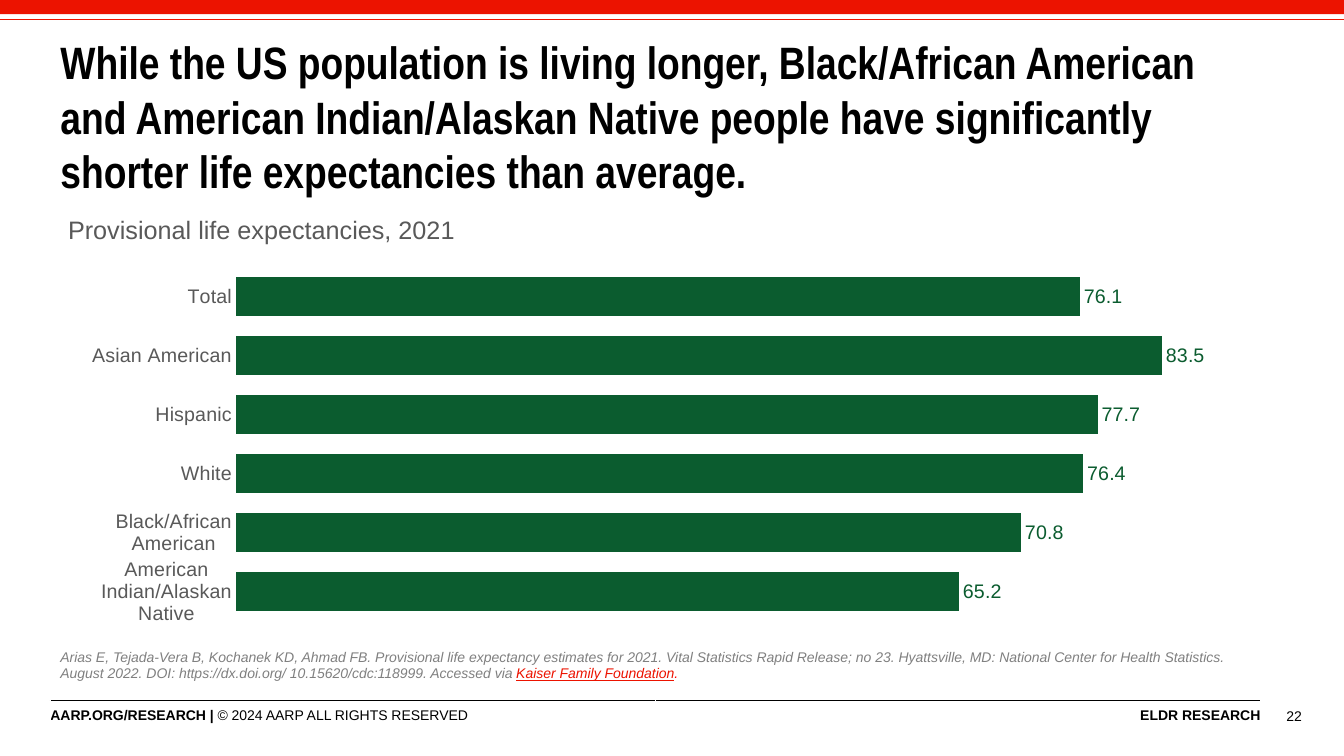
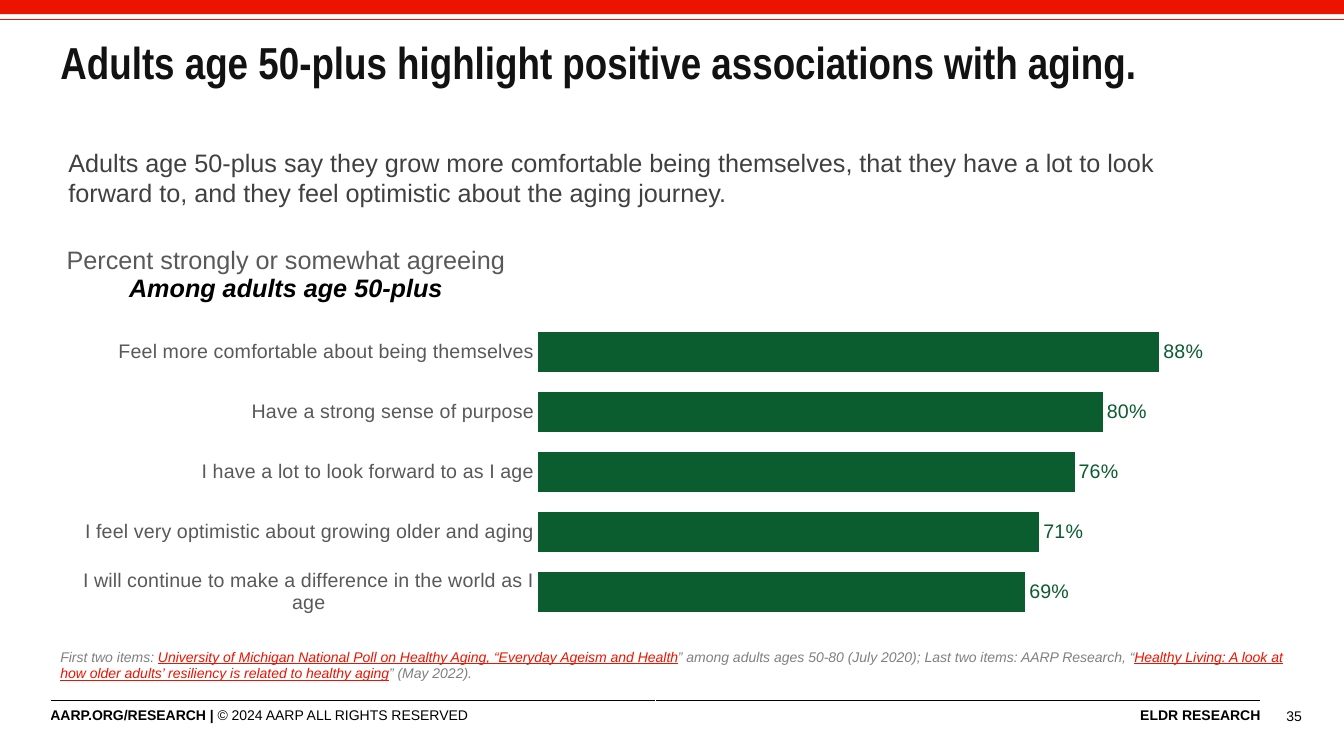
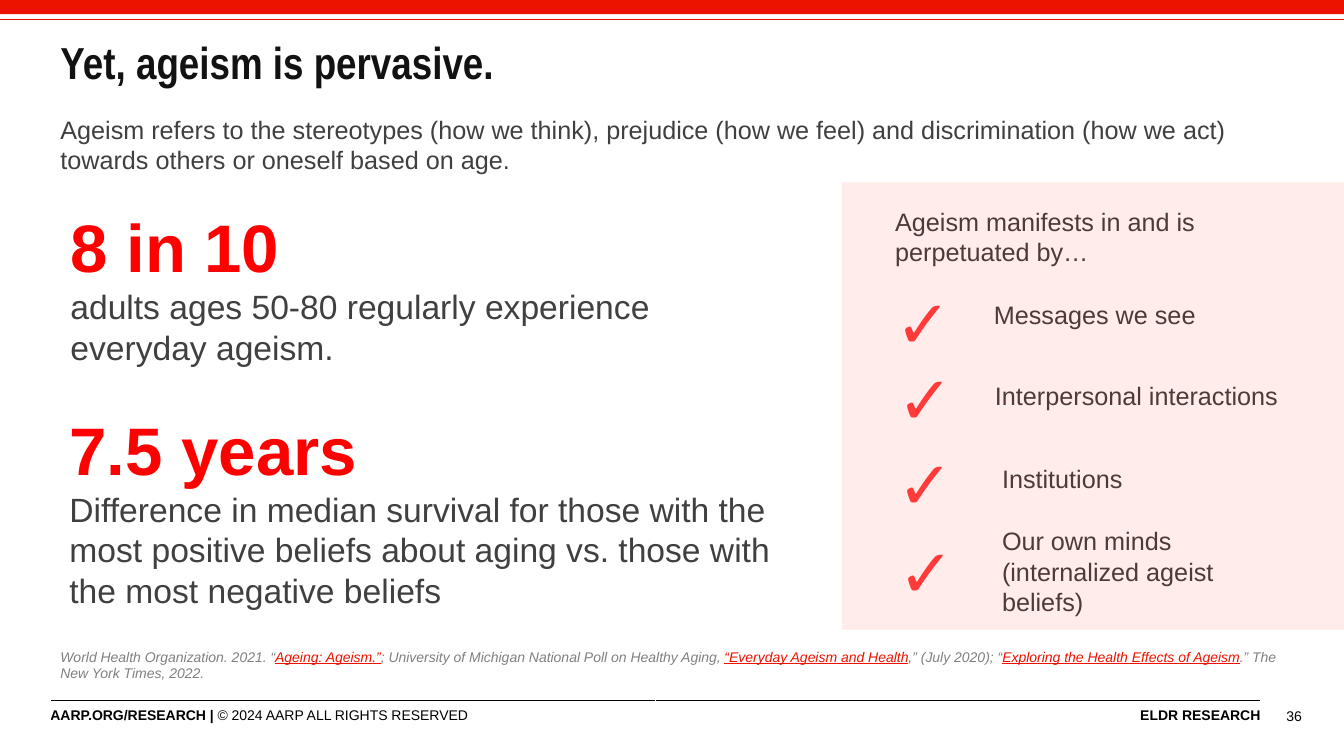
from lxml.etree import SubElement
from pptx import Presentation
from pptx.chart.data import CategoryChartData
from pptx.dml.color import RGBColor
from pptx.enum.chart import XL_CHART_TYPE as ChartType, XL_LABEL_POSITION as LabelPosition
from pptx.enum.chart import XL_TICK_MARK as TickMark
from pptx.enum.shapes import MSO_CONNECTOR as Connector, MSO_SHAPE as Preset
from pptx.enum.text import MSO_ANCHOR as Anchor, MSO_AUTO_SIZE as AutoSize, PP_ALIGN as Align
from pptx.oxml.ns import qn
from pptx.util import Inches, Pt

WIDTH, HEIGHT = 13.33, 7.5
MARGIN = 0.5
CONTENT_WIDTH = 11.98
WIDE_WIDTH = 12.51
RED, BRIGHT_RED, PINK, GREEN = "EC1300", "FF0000", "FFC2BE", "0B5C2F"
BLACK, INK, DARK, MIDDLE, GREY = "000000", "121212", "404040", "595959", "808080"
LINK = {"color": RED, "underline": True}


def rgb(value):
    return RGBColor.from_string(value)


def inches(*values):
    return [Inches(value) for value in values]


def style(font, size=None, color=None, name=None, **flags):
    if size:
        font.size = Pt(size)
    if color:
        font.color.rgb = rgb(color)
    if name:
        font.name = name
    for flag, value in flags.items():
        setattr(font, flag, value)


def write(frame, paragraphs, align=Align.LEFT, **base):
    base = {"name": "Arial", "color": BLACK, **base}
    for index, runs in enumerate(paragraphs):
        paragraph = frame.add_paragraph() if index else frame.paragraphs[0]
        paragraph.alignment = align
        style(paragraph.font, **base)
        for text, changes in runs:
            run = paragraph.add_run()
            run.text = text
            style(run.font, **changes)


def add_text(slide, box, paragraphs, anchor=Anchor.TOP, wrap=True, **base):
    frame = slide.shapes.add_textbox(*inches(*box)).text_frame
    frame.word_wrap = wrap
    frame.vertical_anchor = anchor
    write(frame, paragraphs, **base)


def plain(text):
    return [[(text, {})]]


def add_band(slide):
    left, right, depth = -0.03, 13.36, 0.14
    outline = [inches(*point) for point in
               ((left, depth), (left, 0), (right - 0.02, 0), (right, depth))]
    builder = slide.shapes.build_freeform(*outline[0], scale=1.0)
    builder.add_line_segments(outline[1:], close=True)
    band = builder.convert_to_shape()
    band.shadow.inherit = False
    band.fill.solid()
    band.fill.fore_color.rgb = rgb(RED)
    band.line.fill.background()
    rule = slide.shapes.add_connector(Connector.STRAIGHT, *inches(-0.06, 0.19, WIDTH, 0.19))
    rule.line.color.rgb = rgb(RED)
    rule.line.width = Pt(0.5)
    SubElement(rule.element.spPr, qn("a:effectLst"))
    return [band, rule]


def add_footer(slide):
    holder = slide.shapes.add_table(1, 2, *inches(MARGIN, 6.95, 12, 0.3))
    table = holder.table
    table.first_row = table.horz_banding = False
    table.rows[0].height = Inches(0.3)
    sides = (
        ([("AARP.ORG/RESEARCH | ", {"bold": True}),
          ("© 2024 AARP ALL RIGHTS RESERVED", {})], Align.LEFT),
        ([("ELDR RESEARCH", {"bold": True})], Align.RIGHT),
    )
    for cell, (runs, align) in zip(table.rows[0].cells, sides):
        cell.margin_left = cell.margin_right = cell.margin_top = cell.margin_bottom = 0
        cell.vertical_anchor = Anchor.MIDDLE
        cell.fill.background()
        write(cell.text_frame, [runs], align=align, size=10)
        properties = cell.text_frame._txBody.getparent().get_or_add_tcPr()
        border = SubElement(properties, qn("a:lnT"), w=str(Pt(1)))
        SubElement(SubElement(border, qn("a:solidFill")), qn("a:srgbClr"), val=BLACK)
        properties.insert(0, border)
    return [holder]


def share_on_layout(slide):
    for shape in add_footer(slide) + add_band(slide):
        slide.slide_layout.shapes.element.append(shape.element)


def start_slide(presentation, title, number, source, box=(MARGIN, 0.16, WIDE_WIDTH, 0.9),
                size=32, color=INK):
    slide = presentation.slides.add_slide(presentation.slide_layouts[5])
    if len(presentation.slides) == 1:
        share_on_layout(slide)
    heading = slide.shapes.title
    heading.left, heading.top, heading.width, heading.height = inches(*box)
    frame = heading.text_frame
    frame.auto_size = AutoSize.NONE
    frame.vertical_anchor = Anchor.MIDDLE
    write(frame, plain(title), size=size, color=color, name="Arial Narrow", bold=True)
    add_text(slide, (12.58, 6.93, 0.43, 0.34), plain(str(number)), Anchor.MIDDLE,
             align=Align.RIGHT, size=10)
    add_text(slide, (MARGIN, 6.38, box[2], 0.34), [source], size=10, color=GREY, italic=True)
    return slide


def set_layout(parent, position, **shares):
    for old in parent.findall(qn("c:layout")):
        parent.remove(old)
    layout = SubElement(parent, qn("c:layout"))
    parent.insert(position, layout)
    manual = SubElement(layout, qn("c:manualLayout"))
    if "w" in shares:
        SubElement(manual, qn("c:layoutTarget"), val="inner")
    for mode in ("xMode", "yMode"):
        SubElement(manual, qn(f"c:{mode}"), val="edge")
    for key, share in shares.items():
        SubElement(manual, qn(f"c:{key}"), val=f"{share:.4f}")


def add_bars(slide, box, plot_box, title, bars, maximum, number_format):
    left, top, width, height = box
    data = CategoryChartData(number_format=number_format)
    data.categories = [name for name, _ in bars]
    data.add_series("Series 1", [value for _, value in bars])
    chart = slide.shapes.add_chart(ChartType.BAR_CLUSTERED, *inches(*box), data).chart
    style(chart.font, size=12, color=BLACK, name="Arial")
    chart.has_legend = False
    chart.has_title = True
    write(chart.chart_title.text_frame, title, align=Align.CENTER, size=18, color=MIDDLE,
          bold=False)

    categories = chart.category_axis
    categories.reverse_order = True
    categories.major_tick_mark = categories.minor_tick_mark = TickMark.NONE
    categories.format.line.fill.background()
    style(categories.tick_labels.font, size=14, color=MIDDLE, name="Arial")
    values = chart.value_axis
    values.visible = values.has_major_gridlines = False
    values.minimum_scale, values.maximum_scale = 0, maximum

    plot = chart.plots[0]
    plot.gap_width = 50
    plot.vary_by_categories = False
    fill = plot.series[0].format.fill
    fill.solid()
    fill.fore_color.rgb = rgb(GREEN)
    plot.has_data_labels = True
    labels = plot.data_labels
    labels.show_value = True
    labels.position = LabelPosition.OUTSIDE_END
    labels.number_format, labels.number_format_is_linked = number_format, False
    style(labels.font, size=14, color=GREEN, name="Arial")

    set_layout(chart.element.find(".//" + qn("c:title")), 1, x=0.05 / width, y=0.07 / height)
    plot_left, plot_top, plot_width, plot_height = plot_box
    set_layout(chart.element.find(".//" + qn("c:plotArea")), 0,
               x=plot_left / width, y=plot_top / height,
               w=plot_width / width, h=plot_height / height)


def add_statistic(slide, box, figure, text):
    add_text(slide, box, [[(figure, {"size": 48, "color": BRIGHT_RED, "bold": True})],
                          [(text, {})]], size=24, color=DARK)


def add_checklist(slide, box, heading, items):
    left, top, width, height = box
    add_text(slide, (left + 0.43, top + 0.18, 3.37, 0.71), plain(heading), Anchor.MIDDLE, size=18)
    for text, indent, label_top, label_width, label_height, check_indent, check_top in items:
        add_text(slide, (left + indent, top + label_top, label_width, label_height),
                 plain(text), Anchor.MIDDLE, size=18)
        add_text(slide, (left + check_indent, top + check_top, 0.73, 0.91), plain("✓"),
                 wrap=False, size=48, color=BRIGHT_RED)
    panel = slide.shapes.add_shape(Preset.RECTANGLE, *inches(*box))
    panel.shadow.inherit = False
    panel.line.fill.background()
    panel.fill.solid()
    panel.fill.fore_color.rgb = rgb(PINK)
    SubElement(panel.element.spPr.find(".//" + qn("a:srgbClr")), qn("a:alpha"), val="30000")


def build_life_expectancy(presentation):
    slide = start_slide(
        presentation,
        "While the US population is living longer, Black/African American and American "
        "Indian/Alaskan Native people have significantly shorter life expectancies than average.",
        22,
        [("Arias E, Tejada-Vera B, Kochanek KD, Ahmad FB. Provisional life expectancy estimates "
          "for 2021. Vital Statistics Rapid Release; no 23. Hyattsville, MD: National Center for "
          "Health Statistics. August 2022. DOI: https://dx.doi.org/ 10.15620/cdc:118999. "
          "Accessed via ", {}),
         ("Kaiser Family Foundation", LINK), (".", {"color": BRIGHT_RED})],
        box=(MARGIN, 0.7, CONTENT_WIDTH, 0.9), size=32.4, color=BLACK)
    bars = [("Total", 76.1), ("Asian American", 83.5), ("Hispanic", 77.7), ("White", 76.4),
            ("Black/African American", 70.8), ("American Indian/Alaskan Native", 65.2)]
    add_bars(slide, (0.58, 2, 11.9, 4.25), (1.76, 0.65, 9.9, 3.51),
             plain("Provisional life expectancies, 2021"), bars, 90, "0.0")


def build_positive_associations(presentation):
    slide = start_slide(
        presentation, "Adults age 50-plus highlight positive associations with aging.", 35,
        [("First two items: ", {}),
         ("University of Michigan National Poll on Healthy Aging, “Everyday Ageism and Health",
          LINK),
         ("” among adults ages 50-80 (July 2020); Last two items: AARP Research, “", {}),
         ("Healthy Living: A look at how older adults’ resiliency is related to healthy aging",
          LINK),
         ("” (May 2022).", {})])
    add_text(slide, (0.58, 1.41, 11.79, 0.71),
             plain("Adults age 50-plus say they grow more comfortable being themselves, that they "
                   "have a lot to look forward to, and they feel optimistic about the aging "
                   "journey."), size=18, color=DARK)
    bars = [("Feel more comfortable about being themselves", 0.88),
            ("Have a strong sense of purpose", 0.8),
            ("I have a lot to look forward to as I age", 0.76),
            ("I feel very optimistic about growing older and aging", 0.71),
            ("I will continue to make a difference in the world as I age", 0.69)]
    title = [[("Percent strongly or somewhat agreeing", {})],
             [("Among adults age 50-plus", {"color": BLACK, "bold": True, "italic": True})]]
    add_bars(slide, (0.58, 2.32, 12, 3.93), (4.76, 0.87, 7, 2.98), title, bars, 1, "0%")


def build_ageism(presentation):
    slide = start_slide(
        presentation, "Yet, ageism is pervasive.", 36,
        [("World Health Organization. 2021. “", {}), ("Ageing: Ageism.”", LINK),
         ("; University of Michigan National Poll on Healthy Aging, ", {}),
         ("“Everyday Ageism and Health", LINK), (",” (July 2020); “", {}),
         ("Exploring the Health Effects of Ageism", LINK),
         (".” The New York Times, 2022.", {})])
    add_text(slide, (MARGIN, 1.08, CONTENT_WIDTH, 0.71),
             plain("Ageism refers to the stereotypes (how we think), prejudice (how we feel) and "
                   "discrimination (how we act) towards others or oneself based on age."),
             size=18, color=DARK)
    add_statistic(slide, (0.6, 1.99, 7.22, 1.72), "8 in 10",
                  "adults ages 50-80 regularly experience everyday ageism.")
    add_statistic(slide, (0.59, 4, 7.22, 2.12), "7.5 years",
                  "Difference in median survival for those with the most positive beliefs about "
                  "aging vs. those with the most negative beliefs")
    items = [("Messages we see", 1.41, 1.11, 3.17, 0.4, 0.43, 0.93),
             ("Interpersonal interactions", 1.42, 1.91, 3.17, 0.4, 0.45, 1.69),
             ("Institutions", 1.49, 2.74, 2.83, 0.4, 0.45, 2.53),
             ("Our own minds (internalized ageist beliefs)", 1.49, 3.35, 2.7, 1.01, 0.46, 3.4)]
    add_checklist(slide, (8.35, 1.81, WIDTH - 8.35, 4.44),
                  "Ageism manifests in and is perpetuated by…", items)


def main():
    presentation = Presentation()
    presentation.slide_width, presentation.slide_height = inches(WIDTH, HEIGHT)
    build_life_expectancy(presentation)
    build_positive_associations(presentation)
    build_ageism(presentation)
    presentation.save("out.pptx")


if __name__ == "__main__":
    main()
